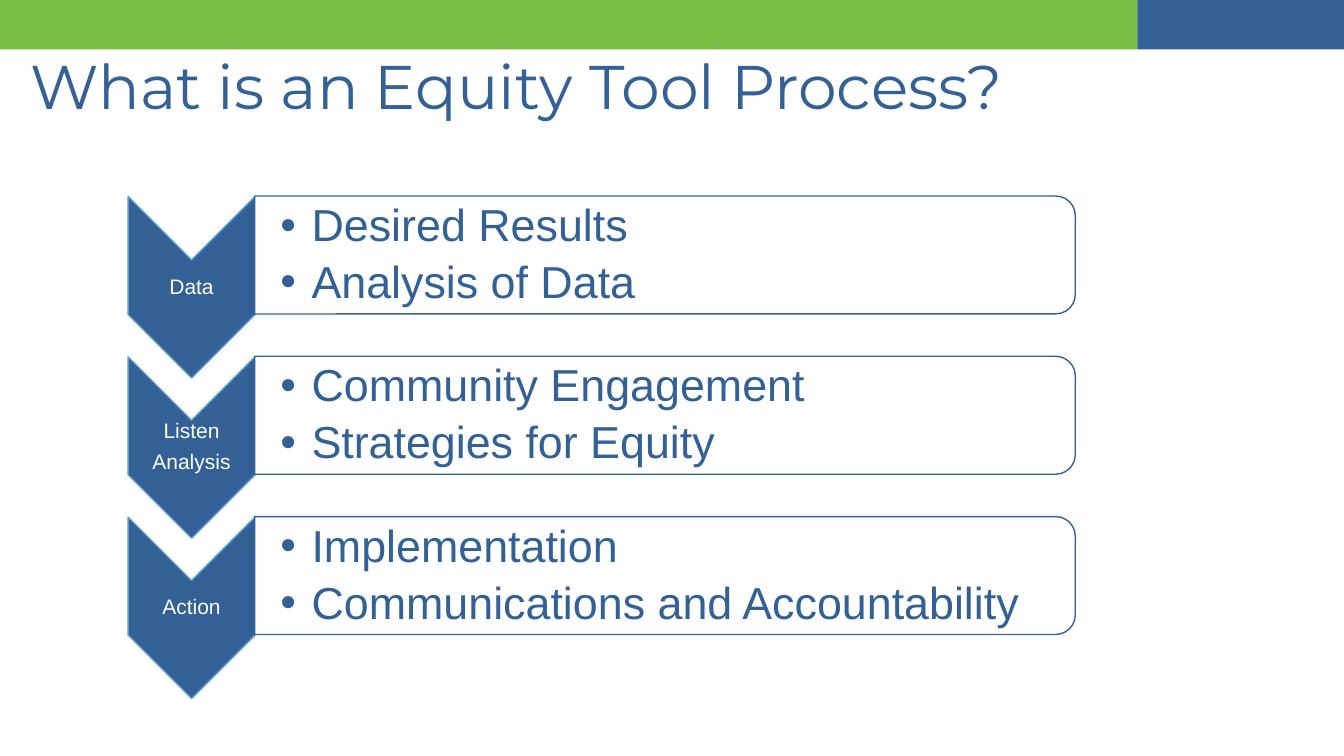
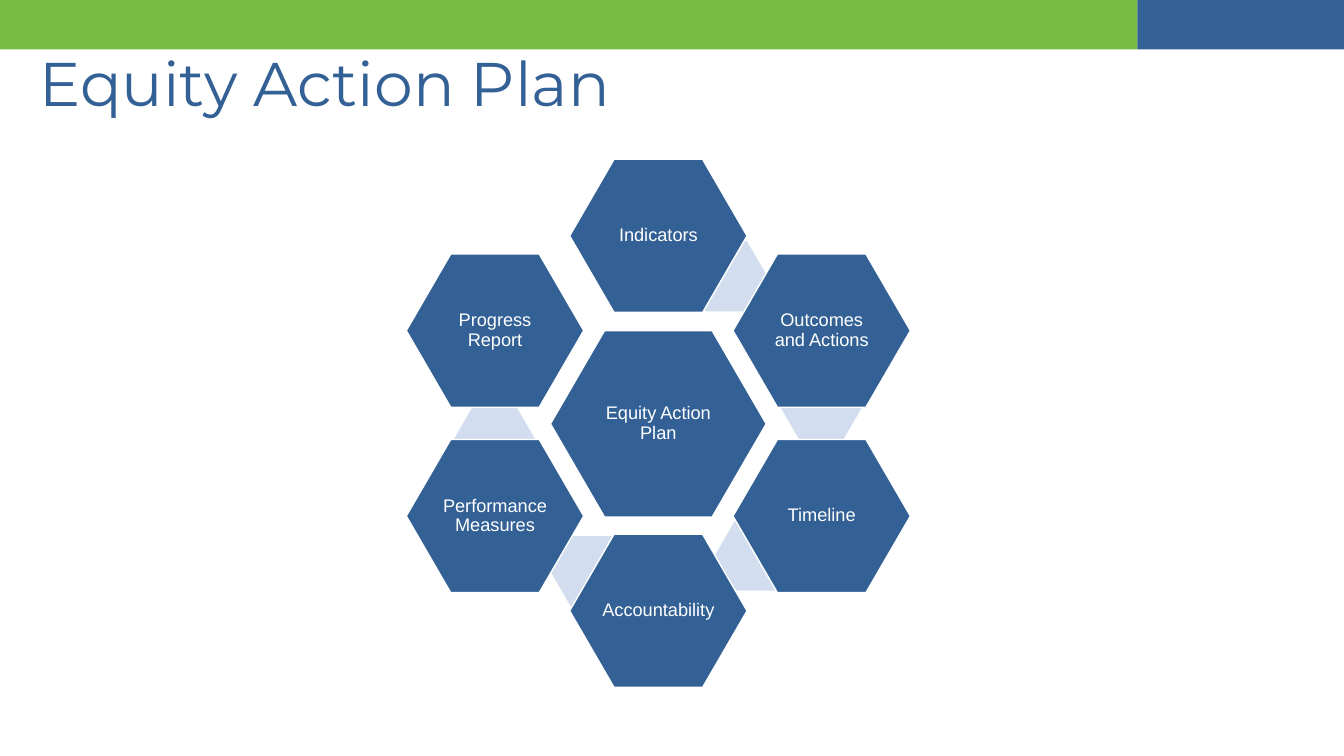
from lxml import etree
from pptx import Presentation, util as u
from pptx.dml.color import RGBColor
from pptx.enum import shapes, text
from pptx.oxml.ns import qn

PX = 9144
SLIDE_W, SLIDE_H = 1333, 750
BAND_H, BAND_SPLIT = 49, 1128
BLUE, GREEN, PALE, SKY, WHITE = "336195", "77BD43", "D2DEEF", "5B9BD5", "FFFFFF"
TITLE_FONT, BODY_FONT = "Montserrat", "Arial"
KIND = shapes.MSO_SHAPE
LEFT, CENTER = text.PP_ALIGN.LEFT, text.PP_ALIGN.CENTER

STEPS = [
    (["Data"], ["Desired Results", "Analysis of Data"]),
    (["Listen", "Analysis"], ["Community Engagement", "Strategies for Equity"]),
    (["Action"], ["Implementation", "Communications and Accountability"]),
]
ROW_TOP, ROW_PITCH = 201, 159

HUB_X, HUB_Y = 653, 420
PLAN_PARTS = [
    ("Indicators", 0, -186),
    ("Outcomes and Actions", 162, -92),
    ("Timeline", 162, 92),
    ("Accountability", 0, 186),
    ("Performance Measures", -162, 92),
    ("Progress Report", -162, -92),
]
LINKS = [(67, -146), (161, -16), (96, 131), (-67, 147), (-163, 16)]


def px(length):
    """Turn a length in px into EMU."""
    return u.Emu(length * PX)


def color(hex_code):
    """Return the colour of a hex string."""
    return RGBColor.from_string(hex_code)


def add_figure(slide, kind, box, fill, line=None, rotation=0):
    """Add a flat preset shape with an optional thin outline."""
    figure = slide.shapes.add_shape(kind, *map(px, box))
    figure.shadow.inherit = False
    figure.rotation = rotation
    figure.fill.solid()
    figure.fill.fore_color.rgb = color(fill)
    if line:
        figure.line.color.rgb = color(line)
        figure.line.width = u.Pt(1)
    else:
        figure.line.fill.background()
    return figure


def add_bullet(paragraph, indent):
    """Give a paragraph a round bullet with a hanging indent."""
    properties = paragraph._p.get_or_add_pPr()
    properties.set("marL", str(px(indent)))
    properties.set("indent", str(-px(indent)))
    etree.SubElement(properties, qn("a:buFont"), typeface=BODY_FONT)
    etree.SubElement(properties, qn("a:buChar"), char="•")


def write(frame, lines, size, ink, font=BODY_FONT, align=CENTER, after=0, inset=2, left=None, bullets=False):
    """Write one paragraph per line, centred vertically in the frame."""
    frame.word_wrap = True
    frame.auto_size = text.MSO_AUTO_SIZE.NONE
    frame.vertical_anchor = text.MSO_ANCHOR.MIDDLE
    frame.margin_left = px(inset if left is None else left)
    frame.margin_right = frame.margin_top = frame.margin_bottom = px(inset)
    for index, line in enumerate(lines):
        paragraph = frame.add_paragraph() if index else frame.paragraphs[0]
        if bullets:
            add_bullet(paragraph, 31)
        paragraph.alignment = align
        paragraph.line_spacing = 0.9
        paragraph.space_after = u.Pt(after)
        run = paragraph.add_run()
        run.text = line
        run.font.name = font
        run.font.size = u.Pt(size)
        run.font.color.rgb = color(ink)


def add_label(slide, box, lines, size, ink, **style):
    """Add a text box."""
    label = slide.shapes.add_textbox(*map(px, box))
    write(label.text_frame, lines, size, ink, **style)


def add_bands(slide):
    """Place the two top bands on the layout that the slides share."""
    tree = slide.slide_layout.shapes.element
    spans = [(0, BAND_SPLIT, GREEN), (BAND_SPLIT, SLIDE_W - BAND_SPLIT, BLUE)]
    for index, (left, width, fill) in enumerate(spans):
        band = add_figure(slide, KIND.RECTANGLE, (left, 0, width, BAND_H), fill)
        band.element.xpath(".//p:cNvPr")[0].set("id", str(20 + index))
        tree.insert(2 + index, band.element)


def add_titled_slide(deck, title, box):
    """Add a title-only slide with the shared title style."""
    slide = deck.slides.add_slide(deck.slide_layouts[5])
    heading = slide.shapes.title
    heading.left, heading.top, heading.width, heading.height = map(px, box)
    write(heading.text_frame, [title], 44, BLUE, font=TITLE_FONT, align=LEFT, inset=5, left=10)
    return slide


def add_step(slide, top, stage, tasks):
    """Add a downward chevron with its panel of tasks."""
    add_figure(slide, KIND.CHEVRON, (100, top + 21, 180, 126), BLUE, SKY, 90)
    add_label(slide, (127, top + 57, 126, 54), stage, 15, WHITE, after=6, inset=1)
    add_figure(slide, KIND.ROUND_2_SAME_RECTANGLE, (601, top - 355, 117, 814), WHITE, BLUE, 90)
    add_label(slide, (253, top, 809, 105), tasks, 32, BLUE, align=LEFT, after=6, left=25, bullets=True)


def add_hexagon(slide, dx, dy, width, height, fill, line=None):
    """Add a hexagon centred at an offset from the hub."""
    box = (HUB_X + dx - width // 2, HUB_Y + dy - height // 2, width, height)
    hexagon = add_figure(slide, KIND.HEXAGON, box, fill, line)
    hexagon.adjustments[0] = 0.29
    return hexagon


def add_plan_part(slide, name, dx=0, dy=0, width=176, height=152):
    """Add a named hexagon of the plan."""
    part = add_hexagon(slide, dx, dy, width, height, BLUE, WHITE)
    write(part.text_frame, [name], 13, WHITE)


def main():
    """Build and save the deck."""
    deck = Presentation()
    deck.slide_width, deck.slide_height = px(SLIDE_W), px(SLIDE_H)

    process = add_titled_slide(deck, "What is an Equity Tool Process?", (20, 17, 1127, 144))
    add_bands(process)
    for index, (stage, tasks) in enumerate(STEPS):
        add_step(process, ROW_TOP + index * ROW_PITCH, stage, tasks)

    plan = add_titled_slide(deck, "Equity Action Plan", (29, 33, 940, 106))
    for dx, dy in LINKS:
        add_hexagon(plan, dx, dy, 81, 70, PALE)
    add_plan_part(plan, "Equity Action Plan", width=214, height=185)
    for name, dx, dy in PLAN_PARTS:
        add_plan_part(plan, name, dx, dy)

    deck.save("out.pptx")


if __name__ == "__main__":
    main()
